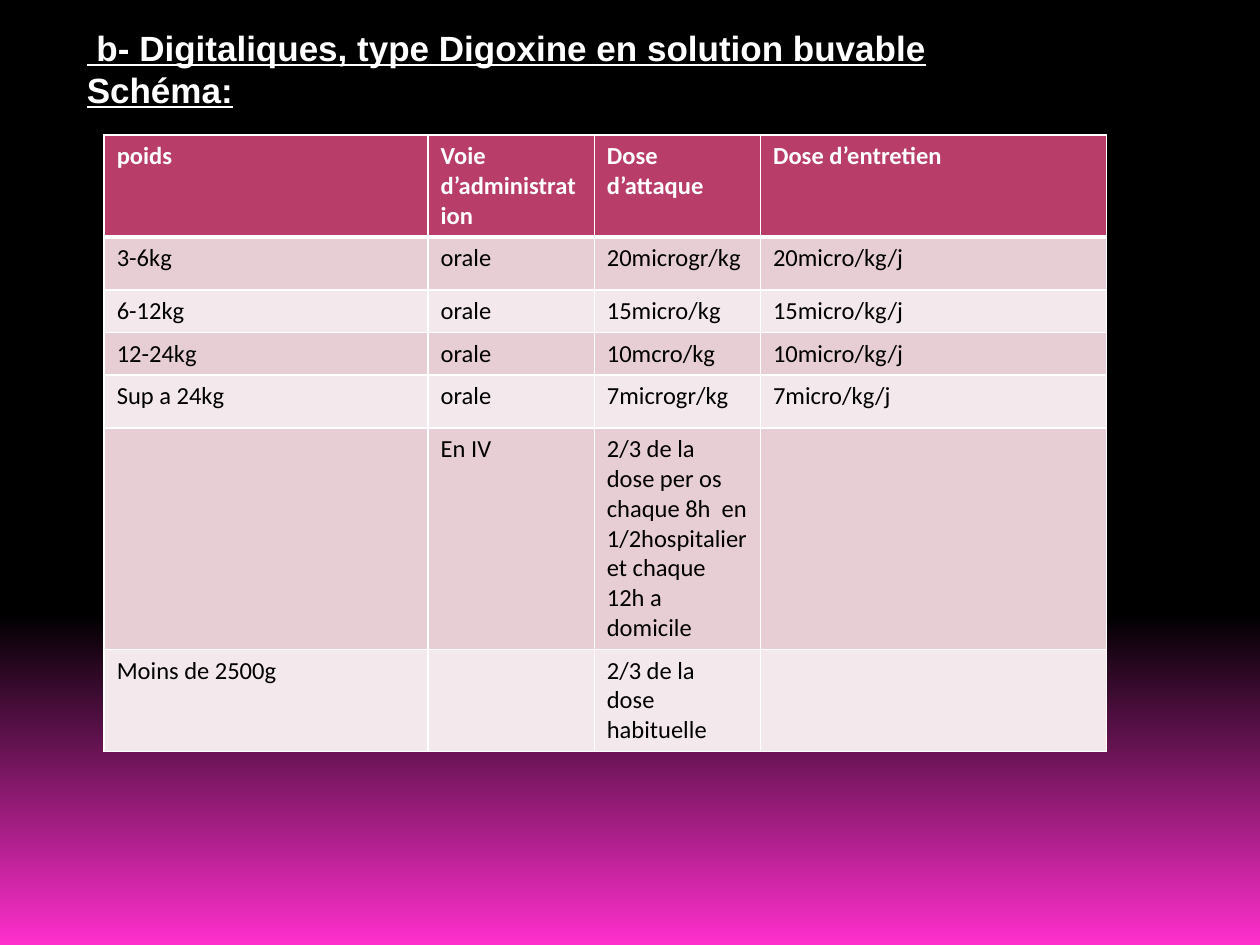
from copy import deepcopy
from dataclasses import dataclass

from lxml.etree import SubElement
from pptx import Presentation
from pptx.dml.color import RGBColor
from pptx.oxml.ns import qn
from pptx.util import Cm, Pt


@dataclass(frozen=True)
class Theme:
    black: str = "000000"
    white: str = "FFFFFF"
    pink: str = "FF2FCD"
    head: str = "B83D68"
    bands: tuple[str, str] = ("E6CED4", "F3E8EB")
    title_font: str = "Arial"
    table_font: str = "Calibri"
    title_size: int = 20
    table_size: int = 14
    thin: int = 1
    thick: int = 3


@dataclass(frozen=True)
class Row:
    height: float
    texts: tuple[str, str, str, str]


THEME = Theme()
WIDTHS = (6.53, 3.35, 3.35, 6.98)
ROWS = (
    Row(1.63, ("poids", "Voie d’administration", "Dose d’attaque", "Dose d’entretien")),
    Row(1.07, ("3-6kg", "orale", "20microgr/kg", "20micro/kg/j")),
    Row(0.76, ("6-12kg", "orale", "15micro/kg", "15micro/kg/j")),
    Row(0.76, ("12-24kg", "orale", "10mcro/kg", "10micro/kg/j")),
    Row(1.07, ("Sup a 24kg", "orale", "7microgr/kg", "7micro/kg/j")),
    Row(3.91, ("", "En IV", "2/3 de la dose per os chaque 8h  en "
               "1/2hospitalier et chaque 12h a domicile", "")),
    Row(1.63, ("Moins de 2500g", "", "2/3 de la dose habituelle", "")),
)
TITLE = (" b- Digitaliques, type Digoxine en solution buvable", "Schéma:")


def set_font(font, name: str, size: int, color: str, bold: bool) -> None:
    font.name = name
    font.size = Pt(size)
    font.bold = bold
    font.color.rgb = RGBColor.from_string(color)


def paint_back(slide) -> None:
    fill = slide.background.fill
    fill.gradient()
    fill.gradient_angle = 270
    first, last = fill.gradient_stops
    first.position, last.position = 0, 1
    first.color.rgb = RGBColor.from_string(THEME.black)
    last.color.rgb = RGBColor.from_string(THEME.pink)
    stop = slide.element.xpath(".//p:bg//a:gs")[0]
    middle = deepcopy(stop)
    middle.set("pos", "65000")
    stop.addnext(middle)


def add_edge(cell, side: str, width: int) -> None:
    props = cell._tc.get_or_add_tcPr()
    line = SubElement(props, qn(f"a:ln{side}"), w=str(Pt(width)))
    paint = SubElement(line, qn("a:solidFill"))
    SubElement(paint, qn("a:srgbClr"), val=THEME.white)


def fill_cell(cell, text: str, index: int) -> None:
    header = index == 0
    for side in "LRTB":
        heavy = (header and side == "B") or (index == 1 and side == "T")
        add_edge(cell, side, THEME.thick if heavy else THEME.thin)
    cell.fill.solid()
    color = THEME.head if header else THEME.bands[(index - 1) % 2]
    cell.fill.fore_color.rgb = RGBColor.from_string(color)
    cell.text = text
    ink = THEME.white if header else THEME.black
    set_font(cell.text_frame.paragraphs[0].font, THEME.table_font,
             THEME.table_size, ink, header)


def add_doses(slide) -> None:
    height = sum(row.height for row in ROWS)
    table = slide.shapes.add_table(len(ROWS), len(WIDTHS), Cm(2.1), Cm(2.72),
                                   Cm(sum(WIDTHS)), Cm(height)).table
    for column, width in zip(table.columns, WIDTHS):
        column.width = Cm(width)
    for index, row in enumerate(ROWS):
        table.rows[index].height = Cm(row.height)
        for place, text in enumerate(row.texts):
            fill_cell(table.cell(index, place), text, index)


def add_title(slide) -> None:
    frame = slide.shapes.add_textbox(Cm(1.5), Cm(0.4), Cm(21.3), Cm(1.96)).text_frame
    frame.word_wrap = True
    frame.text = "\n".join(TITLE)
    for para in frame.paragraphs:
        set_font(para.font, THEME.title_font, THEME.title_size, THEME.white, True)
        para.font.underline = True


def main() -> None:
    deck = Presentation()
    deck.slide_width, deck.slide_height = Cm(25.4), Cm(19.05)
    slide = deck.slides.add_slide(deck.slide_layouts[6])
    paint_back(slide)
    add_doses(slide)
    add_title(slide)
    deck.save("out.pptx")


if __name__ == "__main__":
    main()
